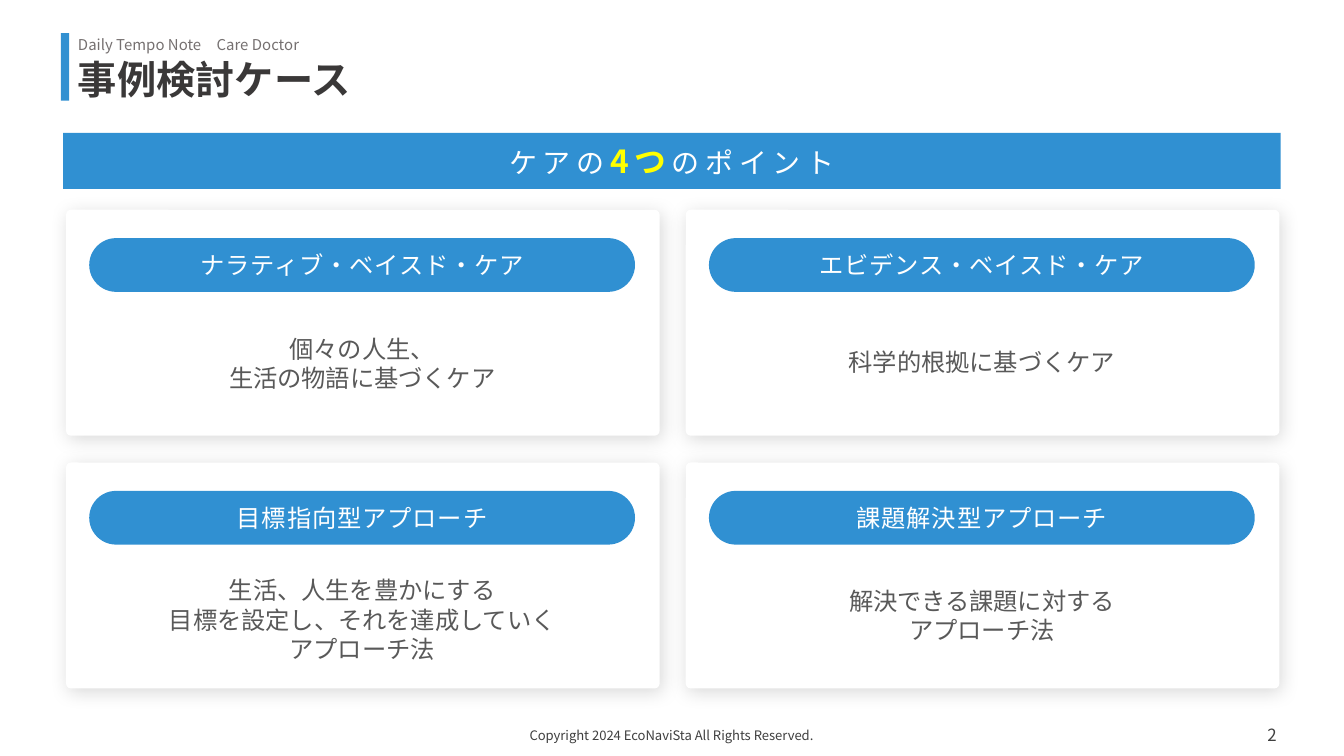
import pptx
import pptx.util
import pptx.dml.color
import pptx.enum.shapes
import pptx.enum.text
import pptx.oxml.ns
import lxml.etree
from dataclasses import dataclass

Pt = pptx.util.Pt
Align = pptx.enum.text.PP_ALIGN
Anchor = pptx.enum.text.MSO_ANCHOR
Shape = pptx.enum.shapes.MSO_SHAPE
qn = pptx.oxml.ns.qn


@dataclass(frozen=True)
class Theme:
    font: str = "Noto Sans CJK JP"
    blue: str = "3090D2"
    edge: str = "3190D1"
    white: str = "FFFFFF"
    yellow: str = "FFFF00"
    title: str = "3A3838"
    body: str = "595959"
    grey: str = "757070"
    foot: str = "3F3F3F"
    tiny: int = 7
    small: int = 8
    page: int = 9
    text: int = 13
    lead: int = 15
    key: int = 17
    head: int = 21


class Deck:
    def __init__(self, theme):
        self.theme = theme
        self.prs = pptx.Presentation()
        self.prs.slide_width, self.prs.slide_height = Pt(720), Pt(405)
        self.slide = self.prs.slides.add_slide(self.prs.slide_layouts[6])

    def style(self, run, size, color, bold=False, gap=0):
        font = run.font
        font.size, font.bold, font.name = Pt(size), bold, self.theme.font
        font.color.rgb = pptx.dml.color.RGBColor.from_string(color)
        props = run._r.get_or_add_rPr()
        east = lxml.etree.Element(qn("a:ea"), typeface=self.theme.font)
        props.find(qn("a:latin")).addnext(east)
        if gap:
            props.set("spc", str(int(gap * 100)))

    def frame(self, shape, align, pad=0):
        frame = shape.text_frame
        frame.word_wrap = True
        frame.vertical_anchor = Anchor.MIDDLE
        frame.margin_left = frame.margin_right = Pt(pad)
        frame.margin_top = frame.margin_bottom = Pt(0)
        frame.paragraphs[0].alignment = align
        return frame

    def label(self, text, box, size, color, align=Align.LEFT, pad=0, bold=False):
        shape = self.slide.shapes.add_textbox(*map(Pt, box))
        frame = self.frame(shape, align, pad)
        frame.text = text
        for para in frame.paragraphs:
            para.alignment = align
            for run in para.runs:
                self.style(run, size, color, bold)
        return frame

    def block(self, box, fill, kind=Shape.RECTANGLE, bend=None):
        shape = self.slide.shapes.add_shape(kind, *map(Pt, box))
        shape.shadow.inherit = False
        shape.fill.solid()
        shape.fill.fore_color.rgb = pptx.dml.color.RGBColor.from_string(fill)
        shape.line.fill.background()
        if bend is not None:
            shape.adjustments[0] = bend
        return shape

    def band(self, parts, box, bend):
        """Blue bar; each part is (text, size, color, bold, letter gap)."""
        shape = self.block(box, self.theme.blue, Shape.ROUNDED_RECTANGLE, bend)
        para = self.frame(shape, Align.CENTER).paragraphs[0]
        for text, *look in parts:
            run = para.add_run()
            run.text = text
            self.style(run, *look)

    def panel(self, box):
        shape = self.block(box, self.theme.white, Shape.ROUNDED_RECTANGLE, 0.022)
        list_ = shape._element.spPr.find(qn("a:effectLst"))
        glow = lxml.etree.SubElement(
            list_, qn("a:outerShdw"), blurRad=str(Pt(10)), dist=str(Pt(2)),
            dir=str(60 * 60000), algn="ctr", rotWithShape="0")
        tint = lxml.etree.SubElement(glow, qn("a:srgbClr"), val="000000")
        lxml.etree.SubElement(tint, qn("a:alpha"), val="15000")

    def card(self, left, top, head, body, mid):
        theme = self.theme
        self.panel((left, top, 318, 121))
        left += 12.4
        self.band([(head, theme.text, theme.white, False, 0.5)],
                  (left, top + 15.2, 292.4, 28.8), 0.5)
        high = 4.2 + 18.8 * len(body)
        self.label("\n".join(body), (left, top + mid - high / 2, 292.4, high),
                   theme.text, theme.body, Align.CENTER, 7.2)


def main():
    theme = Theme()
    deck = Deck(theme)

    # Heading
    deck.label("Daily Tempo Note\u3000Care Doctor".replace("\u3000", "　"),
               (41.8, 19.4, 149, 9.4), theme.small, theme.grey)
    deck.block((32.6, 17.8, 4.5, 36.2), theme.edge)
    title = deck.label("事例検討ケース", (41.8, 31.7, 638.6, 23.8),
                       theme.head, theme.title, bold=True)
    title.paragraphs[0].line_spacing = 0.9

    # Banner
    deck.band([("ケアの", theme.lead, theme.white, False, 3),
               ("4つ", theme.key, theme.yellow, True, 3),
               ("のポイント", theme.lead, theme.white, False, 3)],
              (33.8, 71.2, 652.3, 30), 0)

    # Four cards in a grid
    cards = [
        ("ナラティブ・ベイスド・ケア", ["個々の人生、", "生活の物語に基づくケア"], 82),
        ("エビデンス・ベイスド・ケア", ["科学的根拠に基づくケア"], 81.5),
        ("目標指向型アプローチ",
         ["生活、人生を豊かにする", "目標を設定し、それを達成していく", "アプローチ法"], 84),
        ("課題解決型アプローチ", ["解決できる課題に対する", "アプローチ法"], 82),
    ]
    for spot, (head, body, mid) in enumerate(cards):
        row, col = divmod(spot, 2)
        deck.card(35.4 + 332 * col, 112.4 + 135.4 * row, head, body, mid)

    # Footer
    deck.label("Copyright 2024 EcoNaviSta All Rights Reserved.",
               (211, 383, 297.4, 21.6), theme.tiny, theme.foot, Align.CENTER, 5)
    deck.label("2", (568.8, 383, 120.2, 21.6),
               theme.page, theme.foot, Align.RIGHT, 5)

    deck.prs.save("out.pptx")


if __name__ == "__main__":
    main()
